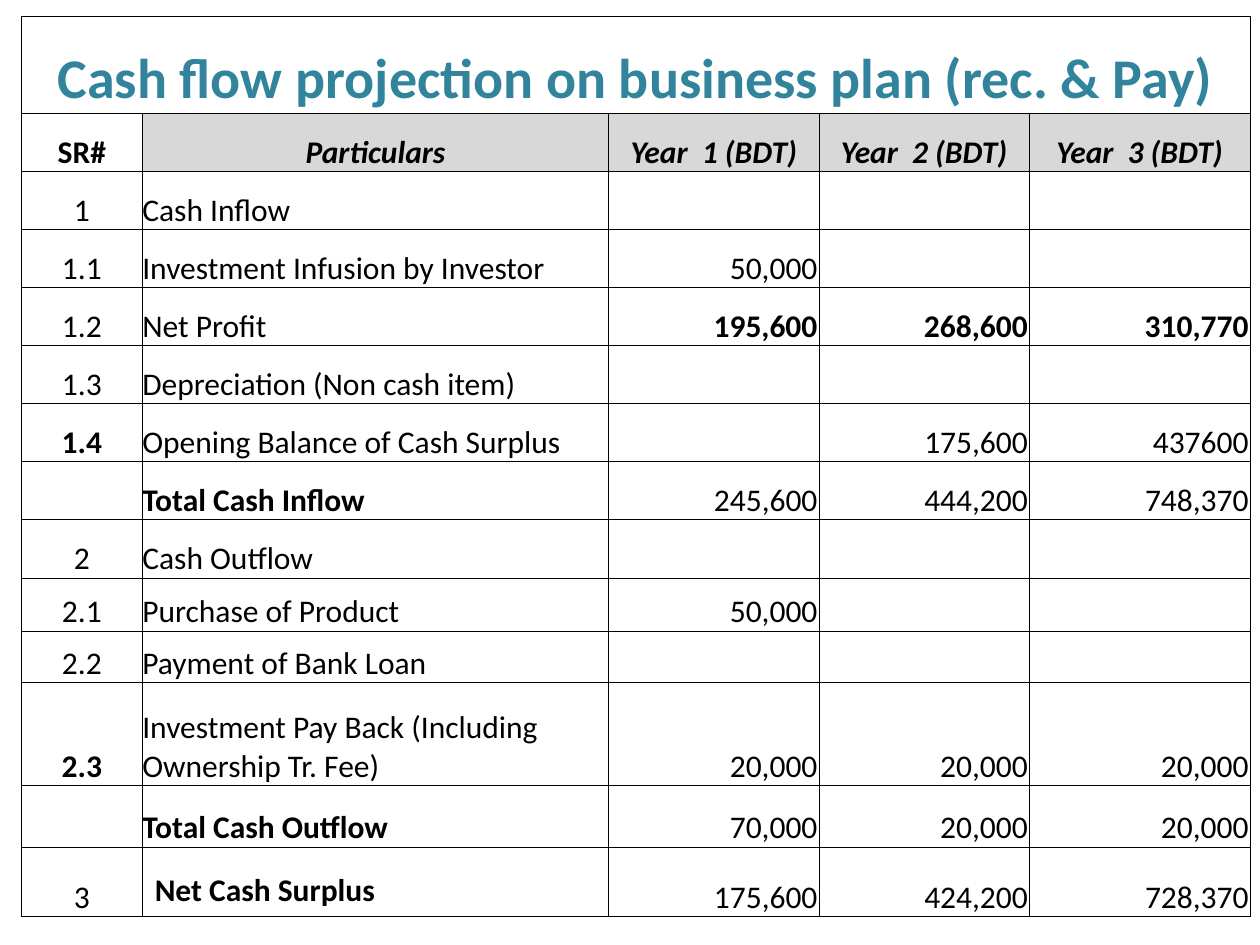
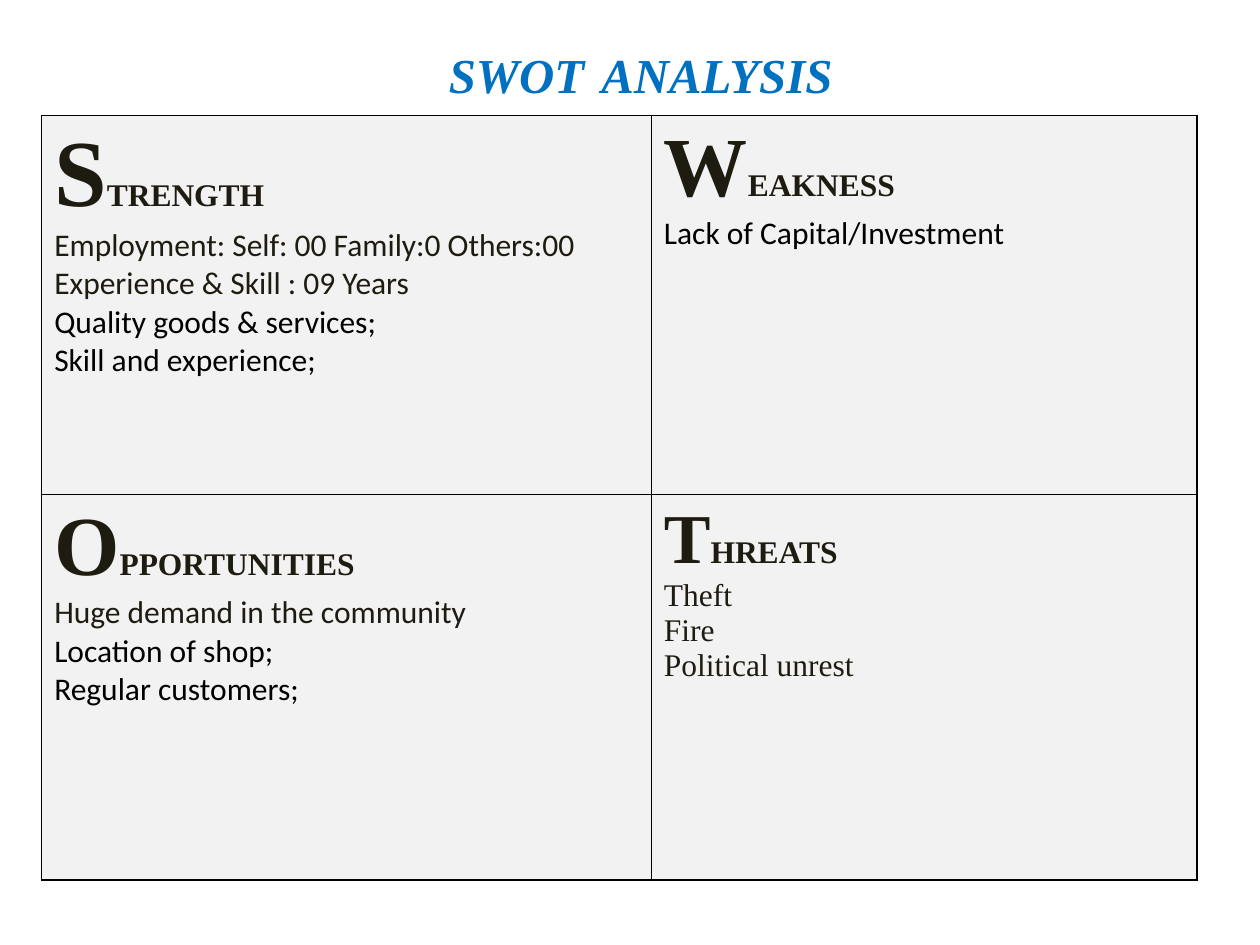
from lxml.etree import SubElement
from pptx import Presentation
from pptx.dml.color import RGBColor
from pptx.enum.text import MSO_ANCHOR as Anchor, MSO_AUTO_SIZE as AutoSize, PP_ALIGN as Align
from pptx.oxml.ns import qn
from pptx.util import Cm, Pt

SANS, SERIF = "Calibri", "Times New Roman"
BLACK, INK, TEAL, BLUE = "000000", "1E1C11", "31849B", "0070C0"
HEADER_GREY, PANEL_GREY = "D8D8D8", "F2F2F2"

CASH_BOX = (0.43, 0.33, 24.77, 18.1)
CASH_COLUMNS = (2.44, 9.4, 4.24, 4.24, 4.45)
CASH_HEIGHTS = (1.96, *[1.17] * 8, 1.07, 1.04, 2.08, 1.24, 1.4)
CASH_TITLE = "Cash flow projection on business plan (rec. & Pay)"
CASH_HEADER = ("SR#", "Particulars", *[f"Year  {year} (BDT)" for year in (1, 2, 3)])
SERIAL, LABEL, AMOUNTS = {0}, {1}, {2, 3, 4}
CASH_ROWS = [
    (("1", "Cash Inflow", "", "", ""), set()),
    (("1.1", "Investment Infusion by Investor", "50,000", "", ""), set()),
    (("1.2", "Net Profit", "195,600", "268,600", "310,770"), AMOUNTS),
    (("1.3", "Depreciation (Non cash item)", "", "", ""), set()),
    (("1.4", "Opening Balance of Cash Surplus", "", "175,600", "437600"), SERIAL),
    (("", "Total Cash Inflow", "245,600", "444,200", "748,370"), LABEL),
    (("2", "Cash Outflow", "", "", ""), set()),
    (("2.1", "Purchase of Product", "50,000", "", ""), set()),
    (("2.2", "Payment of Bank Loan", "", "", ""), set()),
    (("2.3", "Investment Pay Back (Including Ownership Tr. Fee)",
      "20,000", "20,000", "20,000"), SERIAL),
    (("", "Total Cash Outflow", "70,000", "20,000", "20,000"), LABEL),
    (("3", "Net Cash Surplus", "175,600", "424,200", "728,370"), LABEL),
]

SWOT_TITLE_BOX = (1.27, 0.76, 23.29, 1.14)
SWOT_BOX = (0.84, 2.33, 23.29, 15.41)
SWOT_COLUMNS = (12.29, 11)
SWOT_HEIGHTS = (7.64, 7.77)
SWOT_PANELS = [
    ("STRENGTH", 54, SANS, [("Employment: Self: 00 Family:0 Others:00", INK),
                            ("Experience & Skill : 09 Years", INK),
                            ("Quality goods & services;", BLACK),
                            ("Skill and experience;", BLACK)]),
    ("WEAKNESS", 48, SANS, [("Lack of Capital/Investment", BLACK)]),
    ("OPPORTUNITIES", 48, SANS, [("Huge demand in the community", INK),
                                 ("Location of shop;", BLACK),
                                 ("Regular customers;", BLACK)]),
    ("THREATS", 40, SERIF, [("Theft", INK), ("Fire", INK), ("Political unrest", INK)]),
]


def color(hex_code):
    return RGBColor.from_string(hex_code)


def style(font, size, hex_code=BLACK, face=SANS, bold=False, italic=False):
    font.size, font.name = Pt(size), face
    font.bold, font.italic = bold, italic
    font.color.rgb = color(hex_code)


def add_run(paragraph, text, *look, **details):
    run = paragraph.add_run()
    run.text = text
    style(run.font, *look, **details)


def outline(cell, width):
    properties = cell._tc.get_or_add_tcPr()
    for side in ("lnL", "lnR", "lnT", "lnB"):
        line = SubElement(properties, qn(f"a:{side}"), w=str(Pt(width)))
        fill = SubElement(line, qn("a:solidFill"))
        SubElement(fill, qn("a:srgbClr"), val=BLACK)


def paint(cell, hex_code):
    cell.fill.solid()
    cell.fill.fore_color.rgb = color(hex_code)


def add_grid(slide, box, widths, heights, border):
    grid = slide.shapes.add_table(len(heights), len(widths), *map(Cm, box)).table
    grid.first_row = grid.horz_banding = False
    for column, width in zip(grid.columns, widths):
        column.width = Cm(width)
    for row, height in zip(grid.rows, heights):
        row.height = Cm(height)
    for cell in grid.iter_cells():
        outline(cell, border)
        cell.fill.background()
    return grid


def fill_cash_cell(cell, text, align, size=18, **details):
    cell.vertical_anchor = Anchor.BOTTOM
    side = Cm(0.03) if align == Align.RIGHT else 0
    cell.margin_left = cell.margin_right = cell.margin_top = side
    cell.margin_bottom = 0
    cell.text_frame.text = text
    paragraph = cell.text_frame.paragraphs[0]
    paragraph.alignment = align
    style(paragraph.font, size, **details)
    for run in paragraph.runs:
        style(run.font, size, **details)


def cash_flow_table(slide, box):
    grid = add_grid(slide, box, CASH_COLUMNS, CASH_HEIGHTS, 0.5)
    banner = grid.cell(0, 0)
    banner.merge(grid.cell(0, len(CASH_COLUMNS) - 1))
    fill_cash_cell(banner, CASH_TITLE, Align.CENTER, 32, hex_code=TEAL, bold=True)
    for column, heading in enumerate(CASH_HEADER):
        cell = grid.cell(1, column)
        fill_cash_cell(cell, heading, Align.CENTER, bold=True, italic=column > 0)
        if column:
            paint(cell, HEADER_GREY)
    aligns = (Align.CENTER, Align.LEFT, *[Align.RIGHT] * 3)
    for row, (entries, bold_columns) in enumerate(CASH_ROWS, 2):
        for column, (entry, align) in enumerate(zip(entries, aligns)):
            fill_cash_cell(grid.cell(row, column), entry, align, bold=column in bold_columns)
    surplus = grid.cell(len(CASH_HEIGHTS) - 1, 1)
    surplus.margin_left, surplus.margin_bottom = Cm(0.25), Cm(0.13)


def swot_title(slide, box):
    title = slide.shapes.title
    title.left, title.top, title.width, title.height = map(Cm, box)
    frame = title.text_frame
    frame.auto_size, frame.vertical_anchor = AutoSize.NONE, Anchor.MIDDLE
    heading = frame.paragraphs[0]
    heading.alignment = Align.CENTER
    add_run(heading, "SWOT", 27.9, BLUE, SERIF, bold=True, italic=True)
    add_run(heading, " ", 39.6, BLACK, SERIF, bold=True)
    add_run(heading, "ANALYSIS", 27.9, BLUE, SERIF, bold=True, italic=True)


def swot_panel(cell, heading, initial_size, face, points):
    paint(cell, PANEL_GREY)
    frame = cell.text_frame
    first = frame.paragraphs[0]
    add_run(first, heading[0], initial_size, INK, SERIF, bold=True)
    add_run(first, heading[1:], 18, INK, SERIF, bold=True)
    for point, hex_code in points:
        add_run(frame.add_paragraph(), point, 18, hex_code, face)


def swot_table(slide, box):
    grid = add_grid(slide, box, SWOT_COLUMNS, SWOT_HEIGHTS, 1)
    for cell, panel in zip(grid.iter_cells(), SWOT_PANELS):
        swot_panel(cell, *panel)


def main():
    deck = Presentation()
    deck.slide_width, deck.slide_height = Cm(25.4), Cm(19.05)
    title_only, blank = deck.slide_layouts[5], deck.slide_layouts[6]
    cash_flow_table(deck.slides.add_slide(blank), CASH_BOX)
    swot = deck.slides.add_slide(title_only)
    swot_title(swot, SWOT_TITLE_BOX)
    swot_table(swot, SWOT_BOX)
    deck.save("out.pptx")


if __name__ == "__main__":
    main()
